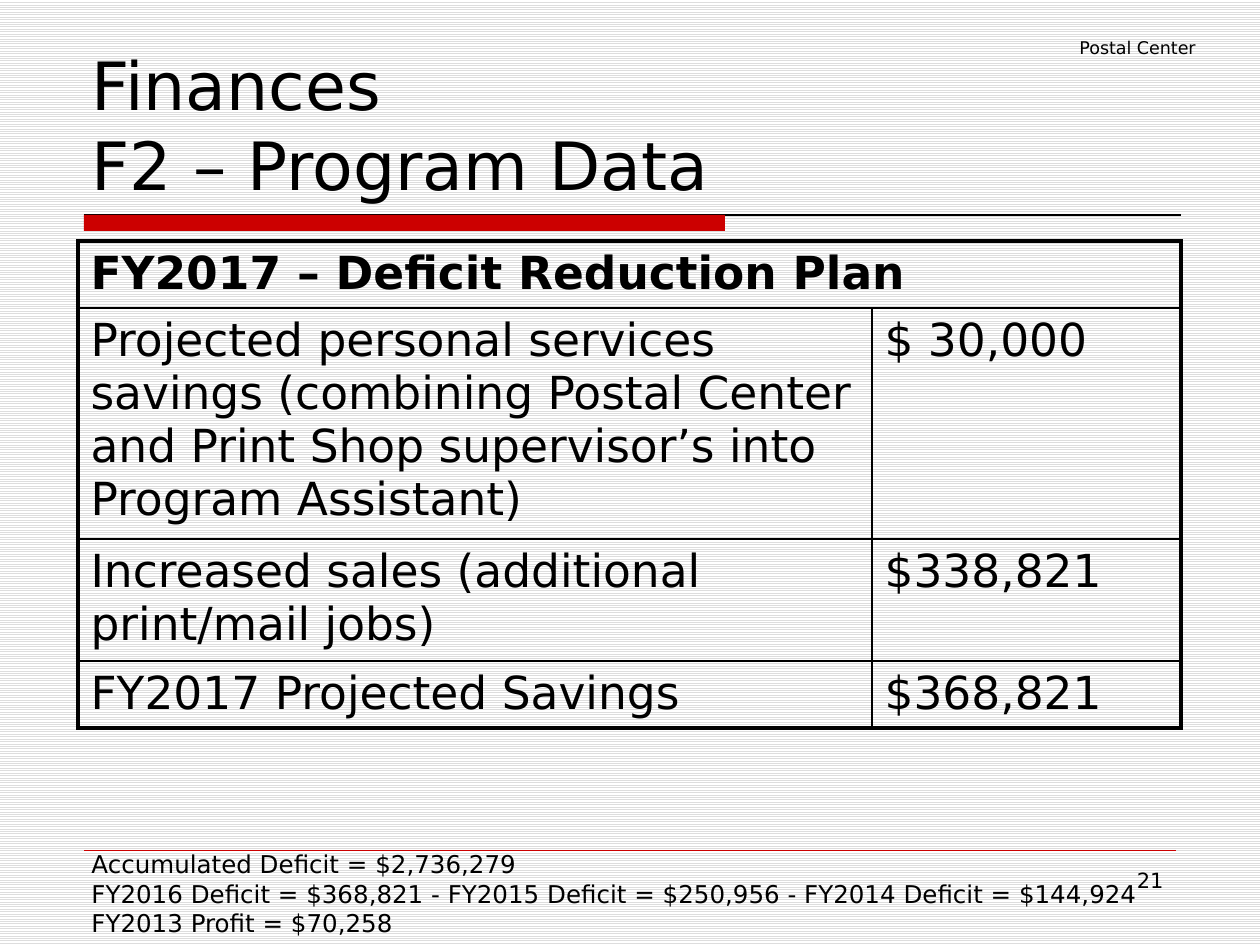
from dataclasses import dataclass

from lxml import etree
from pptx import Presentation
from pptx import util as u
from pptx.dml.color import RGBColor
from pptx.enum import dml, shapes, text
from pptx.oxml import ns

PX = u.Inches(1) / 126


@dataclass(frozen=True)
class Theme:
    font: str = "DejaVu Sans"
    ink: str = "000000"
    accent: str = "CC0000"
    paper: str = "FFFFFF"
    stripe: str = "DDDDDD"
    title: int = 38
    table: int = 26
    note: int = 14
    number: int = 12
    label: int = 10
    outer_border: float = 2.25
    inner_border: float = 1


THEME = Theme()

PLAN = [
    ("FY2017 – Deficit Reduction Plan", ""),
    ("Projected personal services savings (combining Postal Center "
     "and Print Shop supervisor’s into Program Assistant)", "$ 30,000"),
    ("Increased sales (additional print/mail jobs)", "$338,821"),
    ("FY2017 Projected Savings", "$368,821"),
]
COLUMN_WIDTHS = [794, 309]
ROW_HEIGHTS = [66, 224, 119, 66]

HISTORY = [
    "Accumulated Deficit = $2,736,279",
    "FY2016 Deficit = $368,821 - FY2015 Deficit = $250,956 - FY2014 Deficit = $144,924",
    "FY2013 Profit = $70,258",
]


def px(*lengths):
    return [u.Emu(round(length * PX)) for length in lengths]


def color(value):
    return RGBColor.from_string(value)


def style_text(frame, size, align=text.PP_ALIGN.LEFT, bold=False):
    for para in frame.paragraphs:
        para.alignment = align
        para.font.name = THEME.font
        para.font.size = u.Pt(size)
        para.font.bold = bold
        para.font.color.rgb = color(THEME.ink)


def paint_background(page):
    fill = page.background.fill
    fill.patterned()
    fill.pattern = dml.MSO_PATTERN.LIGHT_HORIZONTAL
    fill.fore_color.rgb = color(THEME.stripe)
    fill.back_color.rgb = color(THEME.paper)


def add_title(page, words, *place):
    title = page.shapes.title
    title.left, title.top, title.width, title.height = px(*place)
    frame = title.text_frame
    frame.text = words
    frame.auto_size = text.MSO_AUTO_SIZE.NONE
    frame.vertical_anchor = text.MSO_ANCHOR.BOTTOM
    style_text(frame, THEME.title)


def add_text(page, lines, size, align, *place):
    frame = page.shapes.add_textbox(*px(*place)).text_frame
    frame.word_wrap = True
    frame.text = "\n".join(lines)
    style_text(frame, size, align)


def add_bar(page, *place):
    bar = page.shapes.add_shape(shapes.MSO_SHAPE.RECTANGLE, *px(*place))
    bar.shadow.inherit = False
    bar.fill.solid()
    bar.fill.fore_color.rgb = color(THEME.accent)
    bar.line.fill.background()


def add_rule(page, left, right, top, tint, points):
    rule = page.shapes.add_connector(
        shapes.MSO_CONNECTOR.STRAIGHT, *px(left, top, right, top))
    rule.line.color.rgb = color(tint)
    rule.line.width = u.Pt(points)
    etree.SubElement(rule._element.spPr, ns.qn("a:effectLst"))


def set_borders(cell, outer_sides):
    """Draw all four sides, heavier where the cell meets the table's edge."""
    properties = cell._tc.get_or_add_tcPr()
    for position, side in enumerate("LRTB"):
        points = THEME.outer_border if side in outer_sides else THEME.inner_border
        border = etree.Element(ns.qn(f"a:ln{side}"), w=str(u.Pt(points)))
        fill = etree.SubElement(border, ns.qn("a:solidFill"))
        etree.SubElement(fill, ns.qn("a:srgbClr"), val=THEME.ink)
        properties.insert(position, border)


def add_plan_table(page, left, top):
    rows, columns = len(ROW_HEIGHTS), len(COLUMN_WIDTHS)
    table = page.shapes.add_table(
        rows, columns,
        *px(left, top, sum(COLUMN_WIDTHS), sum(ROW_HEIGHTS))).table
    table.first_row = table.horz_banding = False
    for column, width in zip(table.columns, px(*COLUMN_WIDTHS)):
        column.width = width
    for row, height in zip(table.rows, px(*ROW_HEIGHTS)):
        row.height = height
    table.cell(0, 0).merge(table.cell(0, columns - 1))

    for r, entries in enumerate(PLAN):
        for c, words in enumerate(entries):
            cell = table.cell(r, c)
            cell.text = words
            cell.fill.background()
            style_text(cell.text_frame, THEME.table, bold=r == 0)
            edges = {"L": c == 0 or r == 0, "R": c == columns - 1 or r == 0,
                     "T": r == 0, "B": r == rows - 1}
            set_borders(cell, [side for side, outer in edges.items() if outer])


def main():
    deck = Presentation()
    deck.slide_width, deck.slide_height = px(1260, 945)
    page = deck.slides.add_slide(deck.slide_layouts.get_by_name("Title Only"))
    left, right = text.PP_ALIGN.LEFT, text.PP_ALIGN.RIGHT

    paint_background(page)
    add_rule(page, 84, 1181, 215, THEME.ink, 0.75)
    add_bar(page, 84, 215, 641, 16)
    add_rule(page, 84, 1176, 850, THEME.accent, 0.25)
    add_text(page, ["21"], THEME.number, right, 903, 861, 273, 65)
    add_title(page, "Finances\vF2 – Program Data", 79, 42, 1103, 168)
    add_plan_table(page, 78, 241)
    add_text(page, ["Postal Center"], THEME.label, right, 924, 31, 284, 34)
    add_text(page, HISTORY, THEME.note, left, 79, 843, 1113, 102)
    deck.save("out.pptx")


if __name__ == "__main__":
    main()
